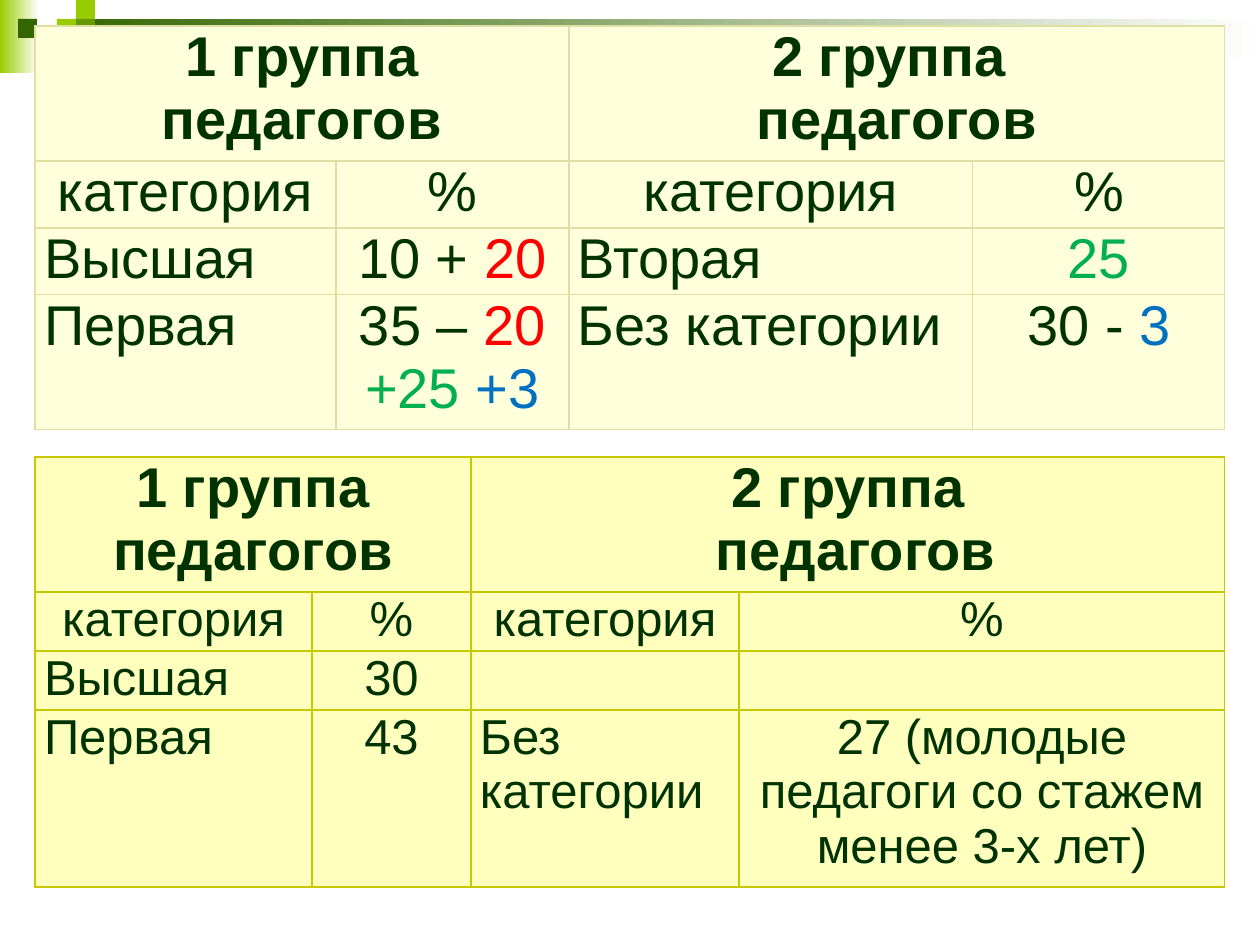
"""Slide comparing the qualification categories of two groups of teachers in two tables."""
from lxml.etree import SubElement
from pptx import Presentation
from pptx.dml.color import RGBColor
from pptx.enum.shapes import MSO_SHAPE as SHAPE
from pptx.enum.text import PP_ALIGN as ALIGN
from pptx.oxml.ns import qn
from pptx.util import Inches, Pt

SCALE = Inches(1) / 126
COLORS = {
    "text": "003300", "red": "FF0000", "green": "00B050", "blue": "0070C0",
    "lime": "99CC00", "leaf": "669900", "forest": "336600", "white": "FFFFFF",
    "pale fill": "FFFFDB", "pale line": "DEDEA5",
    "yellow fill": "FFFFBE", "yellow line": "C8C800",
}


def px(length):
    return round(length * SCALE)


def rgb(name):
    return RGBColor.from_string(COLORS[name])


presentation = Presentation()
presentation.slide_width, presentation.slide_height = px(1260), px(945)
slide = presentation.slides.add_slide(presentation.slide_layouts[6])

decorations = [
    (0, 0, 39, 73, "lime", "white"),
    (57, 19, 1203, 38, "forest", "white"),
    (57, 19, 19, 19, "lime", None),
    (76, 0, 19, 19, "lime", None),
    (76, 19, 19, 19, "leaf", None),
    (38, 38, 19, 19, "lime", None),
    (18, 19, 19, 19, "forest", None),
    (57, 38, 19, 19, "leaf", None),
    (38, 57, 19, 19, "leaf", None),
]
for left, top, width, height, color, fade in decorations:
    shape = slide.shapes.add_shape(SHAPE.RECTANGLE, px(left), px(top), px(width), px(height))
    shape.shadow.inherit = False
    shape.line.fill.background()
    if fade:
        shape.fill.gradient()
        shape.fill.gradient_angle = 0
        for stop, name in zip(shape.fill.gradient_stops, (color, fade)):
            stop.color.rgb = rgb(name)
    else:
        shape.fill.solid()
        shape.fill.fore_color.rgb = rgb(color)

captions = ["категория", "%"] * 2
tables = [
    {
        "top": 26, "columns": [301, 233, 404, 252], "rows": [135, 67, 67, 135],
        "style": "pale", "size": 32,
        "cells": [
            ["1 группа педагогов", "", "2 группа \nпедагогов", ""],
            captions,
            ["Высшая", [("10 + ", "text"), ("20", "red")], "Вторая", [("25", "green")]],
            ["Первая",
             [("35 – ", "text"), ("20 ", "red"), ("+25 ", "green"), ("+3", "blue")],
             "Без категории", [("30 - ", "text"), ("3", "blue")]],
        ],
    },
    {
        "top": 457, "columns": [277, 159, 268, 486], "rows": [135, 59, 59, 177],
        "style": "yellow", "size": 28,
        "cells": [
            ["1 группа педагогов", "", "2 группа\n педагогов", ""],
            captions,
            ["Высшая", "30", "", ""],
            ["Первая", "43", "Без категории",
             "27 (молодые педагоги со стажем менее 3-х лет)"],
        ],
    },
]
for data in tables:
    columns, rows = data["columns"], data["rows"]
    frame = slide.shapes.add_table(len(rows), len(columns), px(35), px(data["top"]),
                                   px(sum(columns)), px(sum(rows)))
    table = frame.table
    table.first_row = table.horz_banding = False
    for column, width in zip(table.columns, columns):
        column.width = px(width)
    for row, height in zip(table.rows, rows):
        row.height = px(height)
    for start in (0, 2):
        table.cell(0, start).merge(table.cell(0, start + 1))

    for row_index, contents in enumerate(data["cells"]):
        header = row_index == 0
        for column_index, content in enumerate(contents):
            cell = table.cell(row_index, column_index)
            cell.margin_left = cell.margin_right = px(9)
            cell.margin_top = cell.margin_bottom = 0
            properties = cell._tc.get_or_add_tcPr()
            for side in ("lnL", "lnR", "lnT", "lnB"):
                border = SubElement(properties, qn(f"a:{side}"), w=str(Pt(0.75)))
                fill = SubElement(border, qn("a:solidFill"))
                SubElement(fill, qn("a:srgbClr"), val=COLORS[data["style"] + " line"])
            cell.fill.solid()
            cell.fill.fore_color.rgb = rgb(data["style"] + " fill")
            if not content:
                continue

            if isinstance(content, str):
                lines = [[(line, "text")] for line in content.split("\n")]
            else:
                lines = [content]
            label = row_index > 1 and column_index % 2 == 0
            for line_index, runs in enumerate(lines):
                text_frame = cell.text_frame
                paragraph = text_frame.add_paragraph() if line_index else text_frame.paragraphs[0]
                paragraph.alignment = ALIGN.LEFT if label else ALIGN.CENTER
                paragraph.font.name = "Arial"
                paragraph.font.size = Pt(32 if header else data["size"])
                paragraph.font.bold = header
                for text, color in runs:
                    run = paragraph.add_run()
                    run.text = text
                    run.font.color.rgb = rgb(color)

presentation.save("out.pptx")
